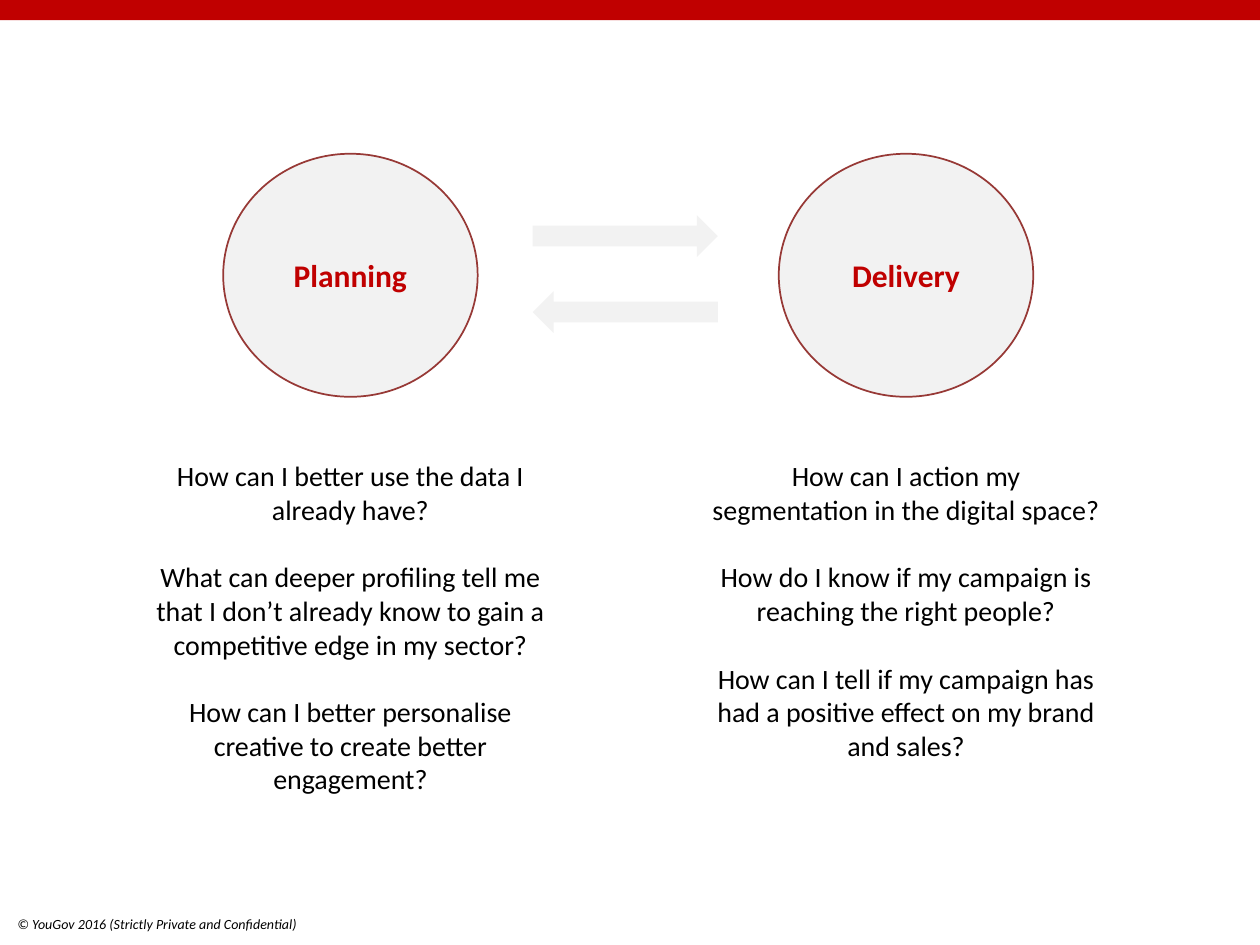
from pptx import Presentation
from pptx.dml.color import RGBColor
from pptx.enum.shapes import MSO_SHAPE
from pptx.enum.text import MSO_ANCHOR, PP_ALIGN
from pptx.util import Cm, Pt

RED = RGBColor(0xC0, 0x00, 0x00)
OUTLINE = RGBColor(0x97, 0x39, 0x36)
PALE = RGBColor(0xF2, 0xF2, 0xF2)
BLACK = RGBColor(0x00, 0x00, 0x00)

COLUMN_STEP = 11.2
COLUMNS = [
    ("Planning", [
        "How can I better use the data I already have?",
        "What can deeper profiling tell me that I don’t already know to gain a competitive edge in my sector?",
        "How can I better personalise creative to create better engagement?",
    ]),
    ("Delivery", [
        "How can I action my segmentation in the digital space?",
        "How do I know if my campaign is reaching the right people?",
        "How can I tell if my campaign has had a positive effect on my brand and sales?",
    ]),
]


def add_filled(kind, left, top, width, height, color):
    shape = page.shapes.add_shape(kind, Cm(left), Cm(top), Cm(width), Cm(height))
    shape.shadow.inherit = False
    shape.fill.solid()
    shape.fill.fore_color.rgb = color
    shape.line.fill.background()
    return shape


def format_text(para, size, color, bold=False, italic=False):
    for span in para.runs:
        span.font.name = "Calibri"
        span.font.size = Pt(size)
        span.font.color.rgb = color
        span.font.bold = bold
        span.font.italic = italic


deck = Presentation()
deck.slide_width = Cm(25.4)
deck.slide_height = Cm(19.05)
page = deck.slides.add_slide(deck.slide_layouts[6])

footer = page.shapes.add_textbox(Cm(0.1), Cm(18.34), Cm(10.46), Cm(0.6))
footer.text_frame.word_wrap = True
footer.text_frame.text = "© YouGov 2016 (Strictly Private and Confidential)"
format_text(footer.text_frame.paragraphs[0], 8, BLACK, italic=True)

add_filled(MSO_SHAPE.RECTANGLE, 0, 0, 25.4, 0.41, RED)

for column, (heading, questions) in enumerate(COLUMNS):
    offset = column * COLUMN_STEP

    circle = add_filled(MSO_SHAPE.OVAL, 4.5 + offset, 3.1, 5.13, 4.9, PALE)
    circle.line.color.rgb = OUTLINE
    circle.line.width = Pt(1)
    circle.text_frame.vertical_anchor = MSO_ANCHOR.MIDDLE
    circle.text_frame.text = heading
    para = circle.text_frame.paragraphs[0]
    para.alignment = PP_ALIGN.CENTER
    format_text(para, 18, RED, bold=True)

    box = page.shapes.add_textbox(Cm(2.9 + offset), Cm(9.12), Cm(8.33), Cm(7.87 - 1.47 * column))
    box.text_frame.word_wrap = True
    box.text_frame.text = "\n".join(questions)
    for number, para in enumerate(box.text_frame.paragraphs):
        para.alignment = PP_ALIGN.CENTER
        if number:
            para.space_before = Pt(19.5)
        format_text(para, 16, BLACK)

for top, rotation in ((5.87, 180), (4.34, 0)):
    arrow = add_filled(MSO_SHAPE.RIGHT_ARROW, 10.74, top, 3.73, 0.84, PALE)
    arrow.rotation = rotation

deck.save("out.pptx")
